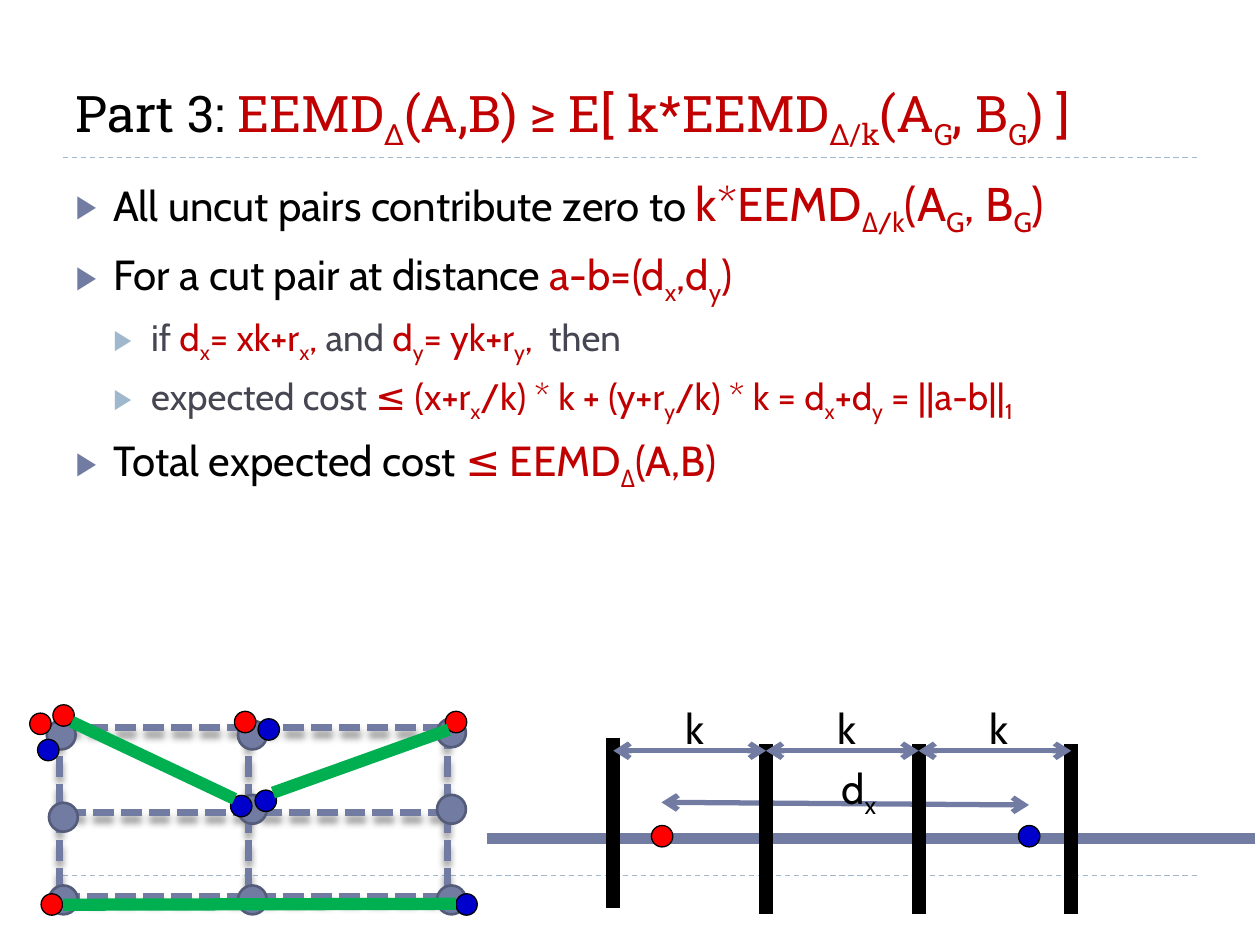
"""Build the EEMD lower-bound slide with its grid and line diagrams."""
from lxml import etree
from pptx import Presentation
from pptx import util as u
from pptx.dml.color import RGBColor
from pptx.enum import dml, shapes, text
from pptx.oxml import ns

Pt = u.Pt
BLACK = RGBColor(0, 0, 0)
RED = RGBColor(0xC0, 0, 0)
GREY = RGBColor(0x46, 0x46, 0x53)
SLATE = RGBColor(0x72, 0x7C, 0xA3)
SLATE_EDGE = RGBColor(0x54, 0x5C, 0x79)
PALE = RGBColor(0x9F, 0xB8, 0xCD)
GREEN = RGBColor(0, 0xB0, 0x50)
DOT_RED = RGBColor(0xFF, 0, 0)
DOT_BLUE = RGBColor(0, 0, 0xCC)


def write(para, pieces, size, font):
    """Add (text, colour[, size]) pieces; underscores enclose subscripts."""
    for words, color, *other in pieces:
        for index, part in enumerate(words.split("_")):
            if part:
                span = para.add_run()
                span.text = part
                span.font.name = font
                span.font.size = Pt(other[0] if other else size)
                span.font.color.rgb = color
                if index % 2:
                    span.font._element.set("baseline", "-25000")


def draw_line(start, end, color, width, dash=None, arrows=False, shadow=False):
    """Draw a straight connector between two points."""
    line = page.shapes.add_connector(
        shapes.MSO_CONNECTOR.STRAIGHT, *[Pt(value) for value in (*start, *end)])
    line.line.color.rgb = color
    line.line.width = Pt(width)
    if dash:
        line.line.dash_style = dash
    if arrows:
        for tag in ("a:headEnd", "a:tailEnd"):
            etree.SubElement(line.line._get_or_add_ln(), ns.qn(tag), type="arrow")
    effects = etree.SubElement(line._element.spPr, ns.qn("a:effectLst"))
    if shadow:
        outer = etree.SubElement(effects, ns.qn("a:outerShdw"), blurRad=str(Pt(4)),
                                 dist=str(Pt(3.4)), dir="5400000", rotWithShape="0")
        tint = etree.SubElement(outer, ns.qn("a:srgbClr"), val="000000")
        etree.SubElement(tint, ns.qn("a:alpha"), val="40000")


deck = Presentation()
deck.slide_width, deck.slide_height = Pt(720), Pt(540)
page = deck.slides.add_slide(deck.slide_layouts[1])
title, body = page.placeholders

for holder, top, height in ((title, 12.25, 77.75), (body, 95.75, 389)):
    holder.left, holder.top, holder.width, holder.height = Pt(36), Pt(top), Pt(648), Pt(height)
    holder.text_frame.auto_size = text.MSO_AUTO_SIZE.NONE

title.text_frame.vertical_anchor = text.MSO_ANCHOR.BOTTOM
para = title.text_frame.paragraphs[0]
para.alignment = text.PP_ALIGN.LEFT
write(para, [("Part 3: ", BLACK),
             ("EEMD_Δ_(A,B) ≥ Ε[ k*EEMD_Δ/k_(A_G_, B_G_) ]", RED)], 28.8, "Roboto Slab")

points = [
    (0, [("All uncut pairs contribute zero to ", BLACK),
         ("k*EEMD_Δ/k_(A_G_, B_G_)", RED, 27)]),
    (0, [("For a cut pair at distance ", BLACK), ("a-b=(d_x_,d_y_)", RED)]),
    (1, [("if ", GREY), ("d_x_= xk+r_x_, ", RED), ("and ", GREY),
         ("d_y_= yk+r_y_,  ", RED), ("then", GREY)]),
    (1, [("expected cost ", GREY),
         ("≤ (x+r_x_/k) * k + (y+r_y_/k) * k = d_x_+d_y_ = ||a-b||_1_", RED)]),
    (0, [("Total expected cost ", BLACK), ("≤ EEMD_Δ_(A,B)", RED)]),
]
for index, (level, pieces) in enumerate(points):
    frame = body.text_frame
    para = frame.add_paragraph() if index else frame.paragraphs[0]
    para.level = level
    para.space_before = Pt(6 - level)
    props = para._p.get_or_add_pPr()
    props.set("marL", str(Pt(21.6 * (level + 1))))
    props.set("indent", str(-Pt(21.6)))
    bullet_color = etree.SubElement(props, ns.qn("a:buClr"))
    etree.SubElement(bullet_color, ns.qn("a:srgbClr"), val=str((SLATE, PALE)[level]))
    etree.SubElement(props, ns.qn("a:buSzPct"), val="76000")
    etree.SubElement(props, ns.qn("a:buChar"), char="▶")
    write(para, pieces, 24 - 3 * level, "Cabin")

for y in (500.5, 90):
    draw_line((36, y), (684, y), PALE, 0.75, dml.MSO_LINE.DASH)

for x, y in ((34, 416), (37, 464.5), (34, 512.5)):
    draw_line((x, y), (x + 219, y), SLATE, 4, dml.MSO_LINE.SQUARE_DOT, shadow=True)
for x in (34, 142, 255.5):
    draw_line((x, 416), (x, 512.5), SLATE, 4, dml.MSO_LINE.SQUARE_DOT, shadow=True)

nodes = [(26.75, 411.75), (136, 411.75), (28, 458.75), (28, 506), (136, 454.25),
         (136, 506), (249.75, 410.5), (249.75, 454.25), (249.75, 506)]
red_dots = [(30.25, 402.75), (17, 407.5), (134, 406.5), (254.5, 406.5), (23.5, 510.75)]
blue_dots = [(21.5, 422.5), (147.5, 410.75), (131.75, 454.5), (145.75, 451.5), (260.5, 510.75)]
for spots, size, fill, edge, weight in (
        (nodes, 16.5, SLATE, SLATE_EDGE, 1.5),
        (red_dots + [(372.25, 471.75)], 12.25, DOT_RED, BLACK, 0.75),
        (blue_dots + [(582, 471.75)], 12.25, DOT_BLUE, BLACK, 0.75)):
    for left, top in spots:
        dot = page.shapes.add_shape(
            shapes.MSO_SHAPE.OVAL, Pt(left), Pt(top), Pt(size), Pt(size))
        dot.shadow.inherit = False
        dot.fill.solid()
        dot.fill.fore_color.rgb = fill
        dot.line.color.rgb = edge
        dot.line.width = Pt(weight)

for start, end in (((134, 456.5), (41, 412.5)), ((256.5, 417), (156, 453)),
                   ((260.5, 516.5), (36, 517))):
    draw_line(start, end, GREEN, 7)

axis_start = len(page.shapes._spTree)
draw_line((278.5, 479), (717, 479), SLATE, 6)
axis = page.shapes[-1]
page.shapes._spTree.remove(axis._element)
first_axis_dot = [shape for shape in page.shapes if shape.left == Pt(372.25)][0]
first_axis_dot._element.addprevious(axis._element)

draw_line((588, 460), (378, 458.5), SLATE, 3, arrows=True)
for index in range(4):
    x = 350.5 + 87.2 * index
    top = 425 if index else 422
    draw_line((x, top), (x, top + 97), BLACK, 8)
    if index:
        draw_line((x, 429), (x - 87.2, 429), SLATE, 3, arrows=True)

labels = [("k", 384.5 + 87 * index, 398, 26) for index in range(3)]
for words, left, top, width in labels + [("d_x_", 473.75, 432, 35.25)]:
    box = page.shapes.add_textbox(Pt(left), Pt(top), Pt(width), Pt(36))
    box.text_frame.word_wrap = False
    box.text_frame.auto_size = text.MSO_AUTO_SIZE.SHAPE_TO_FIT_TEXT
    write(box.text_frame.paragraphs[0], [(words, BLACK)], 24, "Cabin")

deck.save("out.pptx")
